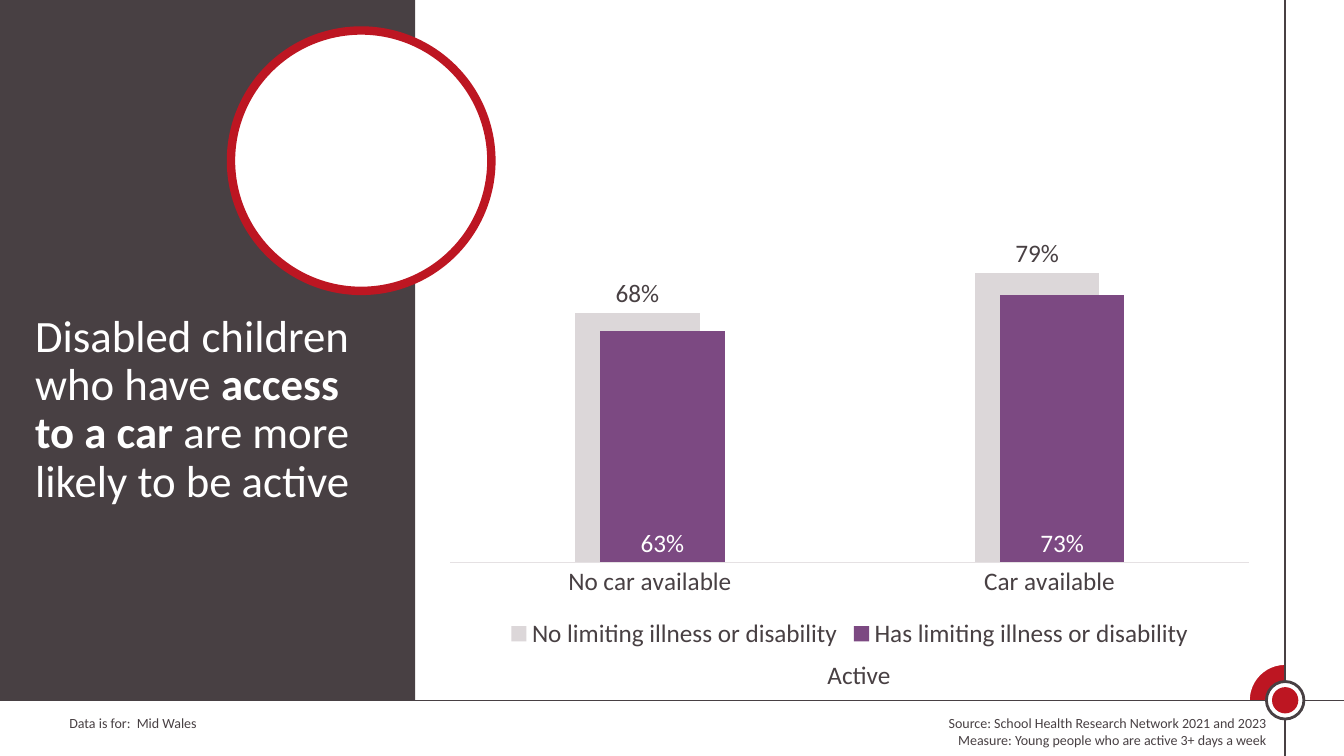
from lxml.etree import SubElement
from pptx import Presentation
from pptx.chart.data import CategoryChartData
from pptx.dml.color import RGBColor
from pptx.enum.chart import XL_CHART_TYPE as Chart, XL_LABEL_POSITION as LabelPos
from pptx.enum.chart import XL_LEGEND_POSITION as LegendPos, XL_TICK_MARK as Tick
from pptx.enum.shapes import MSO_CONNECTOR, MSO_SHAPE as Shape
from pptx.enum.text import PP_ALIGN as Align
from pptx.oxml.ns import qn
from pptx.util import Pt

DARK = RGBColor(0x48, 0x40, 0x43)
RED = RGBColor(0xBD, 0x16, 0x22)
WHITE = RGBColor(0xFF, 0xFF, 0xFF)
GREY = RGBColor(0xDC, 0xD7, 0xD9)
PURPLE = RGBColor(0x7C, 0x49, 0x82)
AXIS = RGBColor(0xE5, 0xE1, 0xE3)
FONT = "Calibri"

# Each paragraph is a list of (text, bold) runs
TITLE = [[("Disabled children who have ", False), ("access to a car", True),
          (" are more likely to be active", False)]]
AREA = [[("Data is for:  Mid Wales", False)]]
SOURCE = [[("Source: School Health Research Network 2021 and 2023", False)],
          [("Measure: Young people who are active 3+ days a week", False)]]
CAPTION = [[("Active", False)]]

CATEGORIES = ["No car available", "Car available"]
# name, values, bar colour, label colour, label position
SERIES = [
    ("No limiting illness or disability", (0.68, 0.79), GREY, DARK, LabelPos.OUTSIDE_END),
    ("Has limiting illness or disability", (0.63, 0.73), PURPLE, WHITE, LabelPos.INSIDE_BASE),
]

WIDTH, HEIGHT = 960, 540
CROSS_X, CROSS_Y = 918, 500.2   # where the two frame lines meet
PANEL_W = 296.5


def add_shape(s, kind, x, y, w, h, fill, line=None, weight=0):
    sp = s.shapes.add_shape(kind, Pt(x), Pt(y), Pt(w), Pt(h))
    sp.shadow.inherit = False
    sp.fill.solid()
    sp.fill.fore_color.rgb = fill
    if line is None:
        sp.line.fill.background()
    else:
        sp.line.color.rgb = line
        sp.line.width = Pt(weight)
    return sp


def add_badge_part(s, kind, size, *style):
    """Add a shape centred on the crossing of the frame lines."""
    return add_shape(s, kind, CROSS_X - size / 2, CROSS_Y - size / 2, size, size, *style)


def add_line(s, x1, y1, x2, y2):
    line = s.shapes.add_connector(MSO_CONNECTOR.STRAIGHT, Pt(x1), Pt(y1), Pt(x2), Pt(y2))
    line.line.color.rgb = DARK
    line.line.width = Pt(1)
    SubElement(line._element.spPr, qn("a:effectLst"))


def set_font(font, size, color):
    font.name = FONT
    font.size = Pt(size)
    font.color.rgb = color


def add_text(s, paragraphs, x, y, w, h, size, color=DARK, align=Align.LEFT, spacing=1.0):
    tf = s.shapes.add_textbox(Pt(x), Pt(y), Pt(w), Pt(h)).text_frame
    tf.word_wrap = True
    for i, runs in enumerate(paragraphs):
        p = tf.add_paragraph() if i else tf.paragraphs[0]
        p.alignment = align
        p.line_spacing = spacing
        for text, bold in runs:
            r = p.add_run()
            r.text = text
            r.font.bold = bold
            set_font(r.font, size, color)


def add_activity_chart(s, x, y, w, h):
    data = CategoryChartData(number_format="0%")
    data.categories = CATEGORIES
    for name, values, *_ in SERIES:
        data.add_series(name, values)
    chart = s.shapes.add_chart(Chart.COLUMN_CLUSTERED, Pt(x), Pt(y), Pt(w), Pt(h), data).chart
    set_font(chart.font, 18, DARK)
    chart.has_title = False
    chart.has_legend = True
    chart.legend.position = LegendPos.BOTTOM
    chart.legend.include_in_layout = False
    set_font(chart.legend.font, 18, DARK)

    axis = chart.category_axis
    axis.major_tick_mark = axis.minor_tick_mark = Tick.NONE
    axis.format.line.color.rgb = AXIS
    axis.format.line.width = Pt(0.75)
    set_font(axis.tick_labels.font, 18, DARK)
    scale = chart.value_axis
    scale.minimum_scale, scale.maximum_scale = 0, 1
    scale.has_major_gridlines = False
    scale.visible = False

    plot = chart.plots[0]
    plot.vary_by_categories = False
    plot.gap_width, plot.overlap = 200, 80
    for series, (_, _, fill, label_color, position) in zip(plot.series, SERIES):
        series.format.fill.solid()
        series.format.fill.fore_color.rgb = fill
        labels = series.data_labels
        labels.show_value = True
        labels.number_format = "0%"
        labels.number_format_is_linked = False
        labels.position = position
        set_font(labels.font, 18, label_color)


def main():
    prs = Presentation()
    prs.slide_width, prs.slide_height = Pt(WIDTH), Pt(HEIGHT)
    s = prs.slides.add_slide(prs.slide_layouts[6])

    quarter = add_badge_part(s, Shape.PIE, 52, RED, WHITE, 1.5)
    quarter.adjustments[0], quarter.adjustments[1] = 106.62, 162
    add_line(s, CROSS_X, 0, CROSS_X, HEIGHT)
    add_line(s, 0, CROSS_Y, WIDTH, CROSS_Y)
    add_badge_part(s, Shape.OVAL, 26.8, WHITE, DARK, 2)
    add_badge_part(s, Shape.OVAL, 18.8, RED)

    add_text(s, AREA, 42.5, 507, 316, 19.5, 10)
    add_shape(s, Shape.RECTANGLE, 0, 0, PANEL_W, CROSS_Y, DARK)
    add_shape(s, Shape.OVAL, 165, 21.8, 186, 186, WHITE, RED, 6)
    add_text(s, SOURCE, 446, 507, 465.5, 31.5, 10, align=Align.RIGHT)
    add_text(s, TITLE, 18, 220.3, 247, 181.5, 32, WHITE, spacing=0.9)
    add_text(s, CAPTION, 584, 467.3, 88, 29, 18)
    add_activity_chart(s, 309.6, 133.2, 594.7, 334)
    prs.save("out.pptx")


if __name__ == "__main__":
    main()
